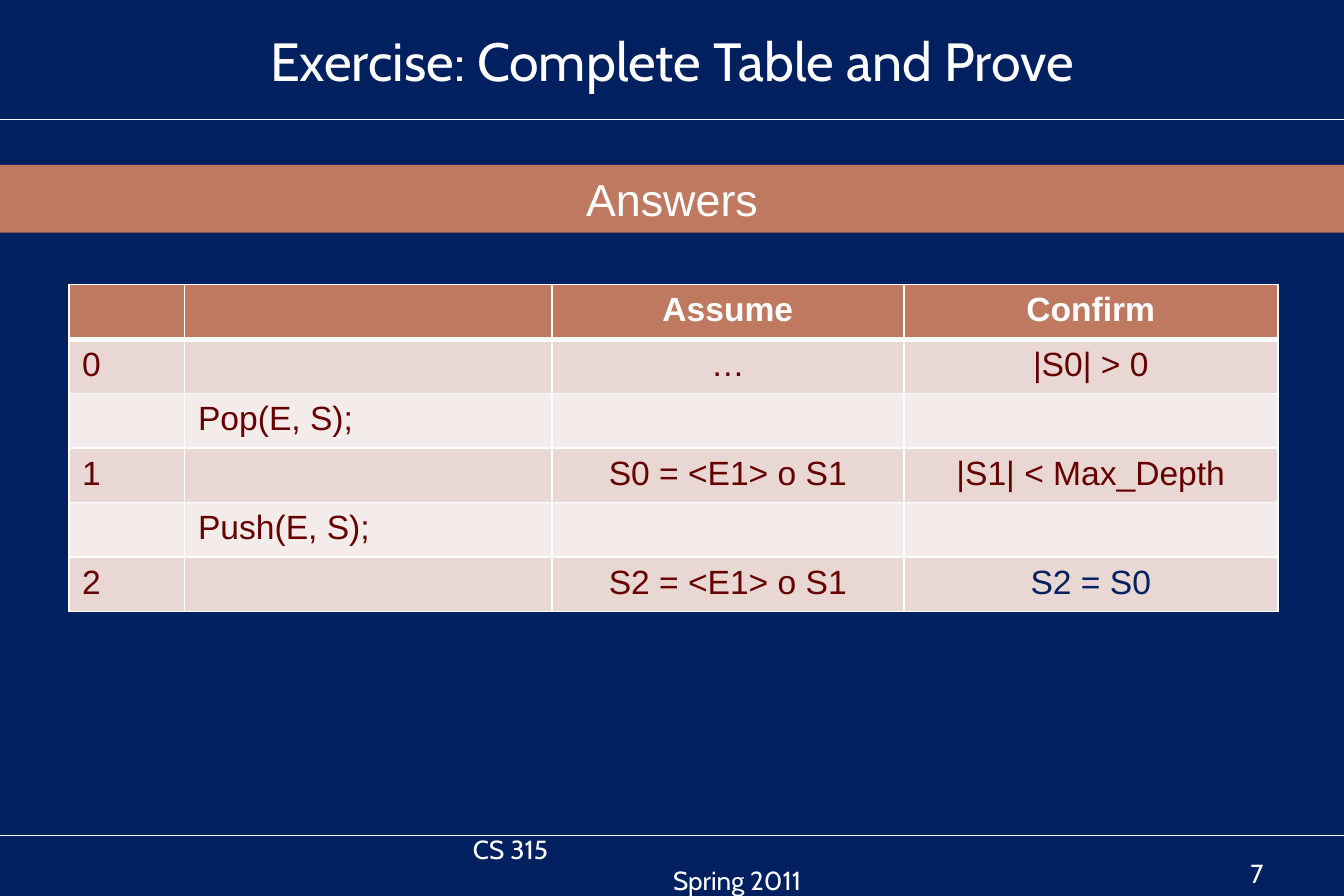
from lxml import etree
from pptx import Presentation
from pptx.dml.color import RGBColor
from pptx.enum.shapes import MSO_CONNECTOR, MSO_SHAPE
from pptx.enum.text import MSO_ANCHOR, PP_ALIGN
from pptx.oxml.ns import qn
from pptx.util import Cm, Pt

LEFT, CENTER, RIGHT = PP_ALIGN.LEFT, PP_ALIGN.CENTER, PP_ALIGN.RIGHT
TOP, MIDDLE, BOTTOM = MSO_ANCHOR.TOP, MSO_ANCHOR.MIDDLE, MSO_ANCHOR.BOTTOM
STRAIGHT, RECTANGLE = MSO_CONNECTOR.STRAIGHT, MSO_SHAPE.RECTANGLE

NAVY, WHITE, COPPER, MAROON = "002060", "FFFFFF", "BE7960", "660000"
BANDS = ("E8D7D2", "F4ECEA")
WIDTH, HEIGHT = 25.4, 16.94

HEADER = ("", "", "Assume", "Confirm")
STEPS = (
    ("0", "", "…", "|S0| > 0"),
    ("", "Pop(E, S);", "", ""),
    ("1", "", "S0 = <E1> o S1", "|S1| < Max_Depth"),
    ("", "Push(E, S);", "", ""),
    ("2", "", "S2 = <E1> o S1", "S2 = S0"),
)
COLUMN_WIDTHS = (2.19, 6.94, 6.65, 7.07)
ROW_HEIGHT = 1.03


def color(value):
    return RGBColor.from_string(value)


def fill_solid(target, value):
    target.fill.solid()
    target.fill.fore_color.rgb = color(value)


def write(paragraph, text, font="Arial", size=18, value=WHITE, bold=False,
          align=LEFT, indent=0):
    paragraph.alignment = align
    if indent:
        paragraph._p.get_or_add_pPr().set("marL", str(Cm(indent)))
    # Paragraph-level settings keep empty cells at the same height.
    target = paragraph.font
    if text:
        run = paragraph.add_run()
        run.text = text
        target = run.font
    target.name = font
    target.size = Pt(size)
    target.bold = bold
    target.color.rgb = color(value)


def set_borders(cell, top=1, bottom=1):
    properties = cell._tc.get_or_add_tcPr()
    sides = (("a:lnL", 1), ("a:lnR", 1), ("a:lnT", top), ("a:lnB", bottom))
    for position, (tag, width) in enumerate(sides):
        line = etree.Element(qn(tag), w=str(Pt(width)))
        fill = etree.SubElement(line, qn("a:solidFill"))
        etree.SubElement(fill, qn("a:srgbClr"), val=WHITE)
        properties.insert(position, line)


class SlideBuilder:
    """Holds the theme font and the slide being filled."""

    theme_font = "Cabin"

    def __init__(self, slide):
        self.slide = slide
        fill_solid(slide.background, NAVY)

    def rule(self, y):
        line = self.slide.shapes.add_connector(
            STRAIGHT, Cm(0), Cm(y), Cm(WIDTH), Cm(y))
        line.line.color.rgb = color(WHITE)
        line.line.width = Pt(0.75)
        etree.SubElement(line._element.spPr, qn("a:effectLst"))

    def title(self, text, left, top, width, height):
        shape = self.slide.shapes.title
        shape.left, shape.top = Cm(left), Cm(top)
        shape.width, shape.height = Cm(width), Cm(height)
        shape.text_frame.vertical_anchor = MIDDLE
        write(shape.text_frame.paragraphs[0], text, font=self.theme_font,
              size=28.8, align=CENTER)

    def banner(self, text, top, height):
        shape = self.slide.shapes.add_shape(
            RECTANGLE, Cm(0), Cm(top), Cm(WIDTH), Cm(height))
        shape.shadow.inherit = False
        fill_solid(shape, COPPER)
        shape.line.fill.background()
        shape.text_frame.vertical_anchor = MIDDLE
        write(shape.text_frame.paragraphs[0], text, size=24, align=CENTER)

    def footer(self, lines, left, top, width, height):
        """Each line is a text with its alignment and left indent."""
        box = self.slide.shapes.add_textbox(
            Cm(left), Cm(top), Cm(width), Cm(height))
        frame = box.text_frame
        frame.word_wrap = True
        frame.vertical_anchor = BOTTOM
        for index, (text, align, indent) in enumerate(lines):
            paragraph = frame.add_paragraph() if index else frame.paragraphs[0]
            write(paragraph, text, font=self.theme_font, size=14,
                  align=align, indent=indent)

    def table(self, left, top):
        rows = (HEADER,) + STEPS
        table = self.slide.shapes.add_table(
            len(rows), len(HEADER), Cm(left), Cm(top),
            Cm(sum(COLUMN_WIDTHS)), Cm(ROW_HEIGHT * len(rows))).table
        for column, width in zip(table.columns, COLUMN_WIDTHS):
            column.width = Cm(width)
        for row_index, texts in enumerate(rows):
            table.rows[row_index].height = Cm(ROW_HEIGHT)
            is_header = row_index == 0
            for column_index, text in enumerate(texts):
                cell = table.cell(row_index, column_index)
                cell.vertical_anchor = TOP
                fill_solid(cell, COPPER if is_header else BANDS[(row_index - 1) % 2])
                set_borders(cell, top=3 if row_index == 1 else 1,
                            bottom=3 if is_header else 1)
                is_goal = text == "S2 = S0"
                value = WHITE if is_header else NAVY if is_goal else MAROON
                write(cell.text_frame.paragraphs[0], text, value=value,
                      bold=is_header, align=CENTER if column_index > 1 else LEFT)


def main():
    presentation = Presentation()
    presentation.slide_width, presentation.slide_height = Cm(WIDTH), Cm(HEIGHT)
    title_only = presentation.slide_layouts[5]
    builder = SlideBuilder(presentation.slides.add_slide(title_only))
    for y in (15.8, 2.26):
        builder.rule(y)
    builder.title("Exercise: Complete Table and Prove", 1.27, 0.38, 22.86, 1.5)
    builder.table(1.3, 5.38)
    builder.footer([("CS 315", LEFT, 0), ("Spring 2011", LEFT, 3.78)],
                   8.69, 15.75, 8.05, 1.32)
    builder.footer([("7", RIGHT, 0)], 18.21, 15.75, 5.92, 1.17)
    builder.banner("Answers", 3.12, 1.28)
    presentation.save("out.pptx")


if __name__ == "__main__":
    main()
